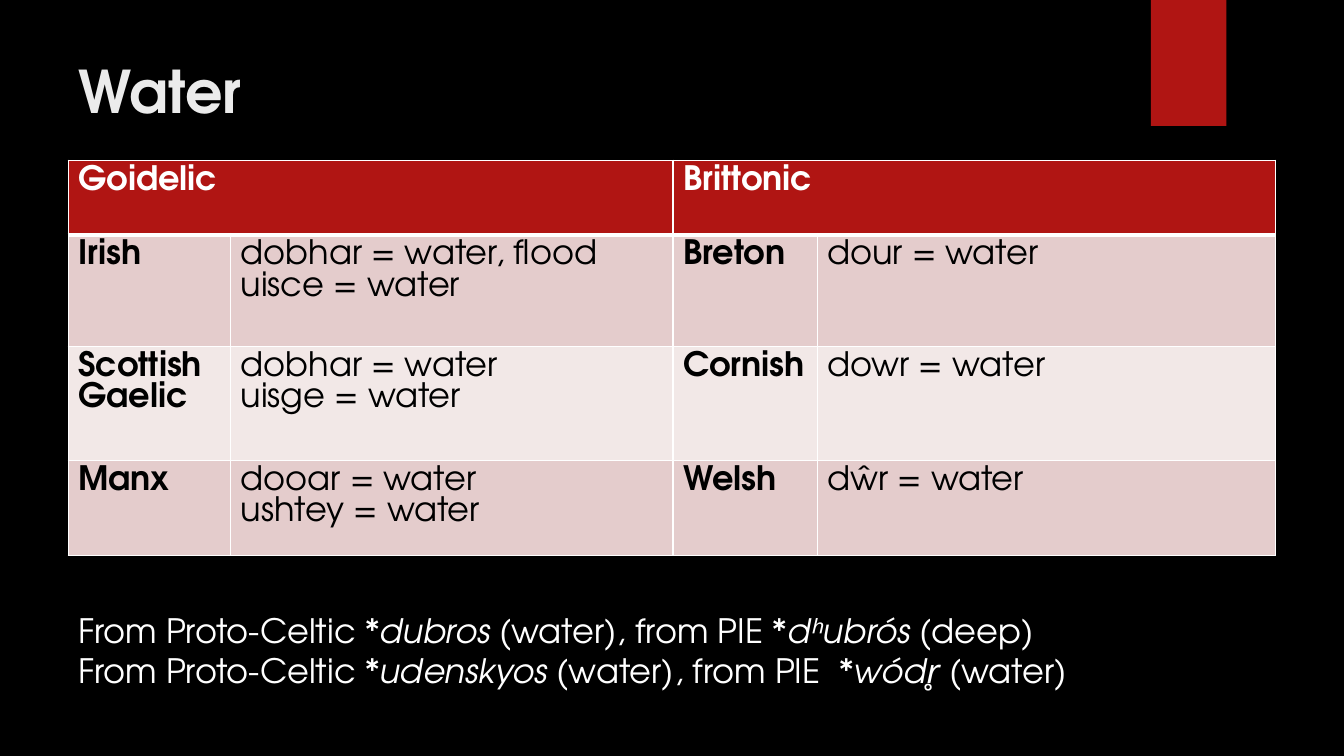
from lxml.etree import SubElement
from pptx import Presentation
from pptx.dml.color import RGBColor
from pptx.enum.shapes import MSO_SHAPE
from pptx.enum.text import MSO_ANCHOR, PP_ALIGN
from pptx.oxml.ns import qn
from pptx.util import Pt

BLACK = RGBColor(0x00, 0x00, 0x00)
WHITE = RGBColor(0xFF, 0xFF, 0xFF)
OFF_WHITE = RGBColor(0xEB, 0xEB, 0xEB)
RED = RGBColor(0xB0, 0x15, 0x13)
BANDS = [RGBColor(0xE4, 0xCC, 0xCC), RGBColor(0xF2, 0xE8, 0xE7)]
FONT = "TeX Gyre Adventor"
LEFT, WIDTH = Pt(48.75), Pt(862.5)


def add_text(p, text, size=24, color=WHITE, bold=False, italic=False):
    r = p.add_run()
    r.text = text
    r.font.name = FONT
    r.font.size = Pt(size)
    r.font.color.rgb = color
    r.font.bold = bold
    r.font.italic = italic


def add_border(cell, side, width):
    """Draw one white edge; side is L, R, T or B. Call before filling the cell."""
    ln = SubElement(cell._tc.get_or_add_tcPr(), qn(f"a:ln{side}"), w=str(Pt(width)))
    SubElement(SubElement(ln, qn("a:solidFill")), qn("a:srgbClr"), val=str(WHITE))


prs = Presentation()
prs.slide_width, prs.slide_height = Pt(960), Pt(540)
s = prs.slides.add_slide(prs.slide_layouts[5])
s.background.fill.solid()
s.background.fill.fore_color.rgb = BLACK

ribbon = s.shapes.add_shape(MSO_SHAPE.RECTANGLE, Pt(822), Pt(0), Pt(54), Pt(90))
ribbon.shadow.inherit = False
ribbon.fill.solid()
ribbon.fill.fore_color.rgb = RED
ribbon.line.fill.background()

title = s.shapes.title
title.left, title.top, title.width, title.height = LEFT, Pt(35.75), Pt(741), Pt(65.5)
tf = title.text_frame
tf.vertical_anchor = MSO_ANCHOR.TOP
p = tf.paragraphs[0]
p.alignment = PP_ALIGN.LEFT
add_text(p, "Water", size=42, color=OFF_WHITE, bold=True)

rows = [
    ["Goidelic", "", "Brittonic", ""],
    ["Irish", "dobhar = water, flood\nuisce = water", "Breton", "dour = water"],
    ["Scottish Gaelic", "dobhar = water\nuisge = water", "Cornish", "dowr = water"],
    ["Manx", "dooar = water\nushtey = water", "Welsh", "dŵr = water"],
]
col_widths = [116, 316, 103, 327.5]
row_heights = [53.25, 79.75, 81.25, 68]
table = s.shapes.add_table(4, 4, LEFT, Pt(114.5), WIDTH, Pt(sum(row_heights))).table
for column, width in zip(table.columns, col_widths):
    column.width = Pt(width)
for row, height in zip(table.rows, row_heights):
    row.height = Pt(height)
for c in (0, 2):
    table.cell(0, c).merge(table.cell(0, c + 1))

for i, row in enumerate(rows):
    edges = {"L": 1, "R": 1, "T": 3 if i == 1 else 1, "B": 3 if i == 0 else 1}
    for j, text in enumerate(row):
        cell = table.cell(i, j)
        for side, width in edges.items():
            add_border(cell, side, width)
        cell.fill.solid()
        cell.fill.fore_color.rgb = RED if i == 0 else BANDS[(i - 1) % 2]
        if cell.is_spanned:
            continue
        for n, line in enumerate(text.split("\n")):
            p = cell.text_frame.paragraphs[0] if n == 0 else cell.text_frame.add_paragraph()
            add_text(p, line, color=WHITE if i == 0 else BLACK, bold=j % 2 == 0)

# Plain and italic runs alternate
etymologies = [
    ["From Proto-Celtic ", "*dubros ", "(water), from PIE ", "*dʰubrós ", "(deep)"],
    ["From Proto-Celtic ", "*udenskyos ", "(water), from PIE  ", "*wódr̥ ", "(water)"],
]
tf = s.shapes.add_textbox(LEFT, Pt(432), WIDTH, Pt(65.5)).text_frame
tf.word_wrap = True
for i, parts in enumerate(etymologies):
    p = tf.paragraphs[0] if i == 0 else tf.add_paragraph()
    for n, part in enumerate(parts):
        add_text(p, part, italic=n % 2 == 1)

prs.save("out.pptx")
